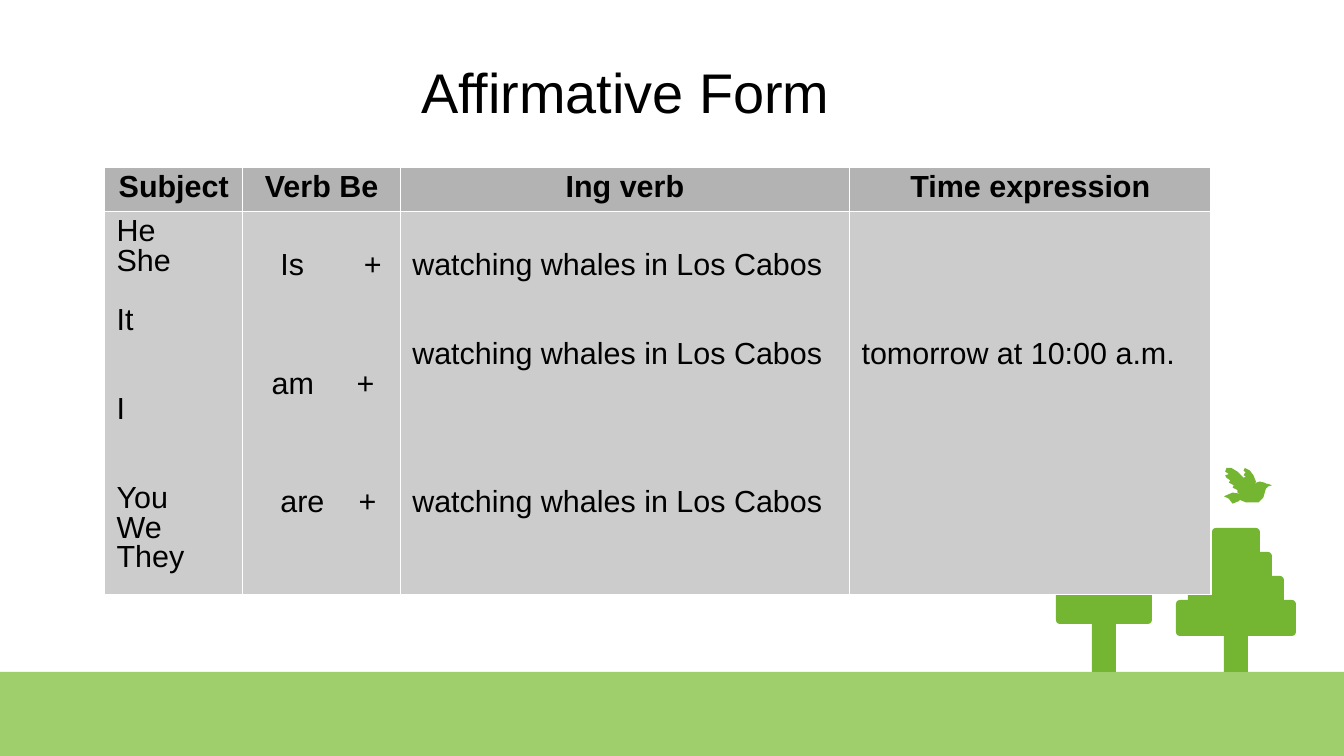
from pptx import Presentation
from pptx.dml.color import RGBColor
from pptx.enum.shapes import MSO_SHAPE
from pptx.enum.text import MSO_ANCHOR, PP_ALIGN
from pptx.oxml import parse_xml
from pptx.oxml.ns import nsdecls
from pptx.util import Cm, Pt

FONT = "Arial"
BLACK = RGBColor(0x00, 0x00, 0x00)
GRASS = RGBColor(0x9E, 0xCF, 0x6C)
LEAF = RGBColor(0x74, 0xB5, 0x31)
HEADER_GRAY = RGBColor(0xB3, 0xB3, 0xB3)
BODY_GRAY = RGBColor(0xCC, 0xCC, 0xCC)

LINE = 17.5  # points taken by one line of table text
COLUMN_WIDTHS = (2.88, 3.28, 9.36, 7.53)
HEADERS = ("Subject", "Verb Be", "Ing verb", "Time expression")
ACTION = "watching whales in Los Cabos"
# Per column: top margin in cm, then (lines skipped, text, tab stops in cm)
BODY = (
    (0.13, [(0, "He", ()), (0, "She", ()), (1, "It", ()), (2, "I", ()),
            (2, "You", ()), (0, "We", ()), (0, "They", ())]),
    (0.84, [(0, "\tIs\t+", (0.53, 2.27)), (3, "\tam\t+", (0.35, 2.12)),
            (3, "\tare\t+", (0.53, 2.16))]),
    (0.84, [(0, ACTION, ()), (2, ACTION, ()), (4, ACTION, ())]),
    (2.69, [(0, "tomorrow at 10:00 a.m.", ())]),
)

# Outlines on a grid 39 units wide
BIRD_WIDTH = 39
BIRD_PARTS = (
    # wing in front
    [(24, 6), (21, 2), (17, 0), (16.5, 2), (18, 4), (17, 4), (16.5, 5.5),
     (18, 7), (16, 7.5), (17, 12), (20, 15), (24, 17), (25, 15), (25.5, 11)],
    # body
    [(29, 11), (26.5, 12.5), (24, 15), (23, 15), (19, 11), (11, 3), (6, 0.5),
     (2, 0.5), (1, 3), (4, 5), (1, 6), (2, 8), (5, 10), (4, 12), (8, 14),
     (7, 16), (11, 18), (11, 20), (14, 21), (7, 20), (0, 23), (4, 25),
     (7, 29), (12, 27), (13, 26), (18, 28), (23, 28.5), (28, 27.5), (32, 24),
     (34, 17), (35, 16), (35, 13), (33, 11.5)],
    # beak
    [(35, 13), (36, 13.3), (39, 14.5), (36.5, 15.3), (35, 16)],
)


def add_text(tf, text, first=False, size=18, bold=False, align=PP_ALIGN.LEFT,
             spacing=0.87, before=0, tabs=()):
    p = tf.paragraphs[0] if first else tf.add_paragraph()
    p.alignment = align
    p.line_spacing = spacing
    p.space_before = Pt(before)
    if tabs:
        stops = "".join(f'<a:tab pos="{Cm(t)}" algn="l"/>' for t in tabs)
        p._p.get_or_add_pPr().append(
            parse_xml(f'<a:tabLst {nsdecls("a")}>{stops}</a:tabLst>'))
    r = p.add_run()
    r.text = text
    r.font.name = FONT
    r.font.size = Pt(size)
    r.font.bold = bold
    r.font.color.rgb = BLACK


def paint(sp, color):
    sp.shadow.inherit = False
    sp.fill.solid()
    sp.fill.fore_color.rgb = color
    sp.line.fill.background()


def add_block(s, kind, x, y, w, h, color):
    sp = s.shapes.add_shape(kind, Cm(x), Cm(y), Cm(w), Cm(h))
    paint(sp, color)
    return sp


def add_tree(s, x, y, w, h, tiers):
    """Stack tiers that widen downwards over a trunk, centred in the box."""
    center = x + w / 2
    add_block(s, MSO_SHAPE.RECTANGLE, center - 0.25, y + 0.5, 0.5, h - 0.5, LEAF)
    for i in reversed(range(tiers)):
        width = 1 + 0.5 * i
        sp = add_block(s, MSO_SHAPE.ROUNDED_RECTANGLE, center - width / 2,
                       y + 0.5 * i, width, 0.75, LEAF)
        sp.adjustments[0] = 0.11


def add_bird(s, x, y, w):
    for start, *rest in BIRD_PARTS:
        builder = s.shapes.build_freeform(*start, scale=Cm(w) / BIRD_WIDTH)
        builder.add_line_segments(rest, close=True)
        paint(builder.convert_to_shape(Cm(x), Cm(y)), LEAF)


def add_scenery(s, w, h):
    ground = h - 1.75
    add_block(s, MSO_SHAPE.RECTANGLE, 0, ground, w, 1.75, GRASS)
    add_tree(s, w - 3.5, ground - 3, 2.5, 3, tiers=4)
    add_tree(s, w - 6, ground - 2.75, 2, 2.75, tiers=3)
    add_bird(s, w - 2.5, ground - 4.25, 1)


def add_title(s, x, y, w, h):
    tf = s.shapes.add_textbox(Cm(x), Cm(y), Cm(w), Cm(h)).text_frame
    tf.word_wrap = True
    tf.vertical_anchor = MSO_ANCHOR.MIDDLE
    tf.margin_left = tf.margin_right = tf.margin_bottom = 0
    tf.margin_top = Cm(0.08)
    add_text(tf, "Affirmative Form", first=True, size=33,
             align=PP_ALIGN.CENTER, spacing=0.93)


def style_cell(cell, color, top=0.13):
    cell.margin_left = cell.margin_right = Cm(0.25)
    cell.margin_top, cell.margin_bottom = Cm(top), Cm(0.13)
    tcPr = cell._tc.get_or_add_tcPr()
    for side in ("lnL", "lnR", "lnT", "lnB"):
        tcPr.append(parse_xml(
            f'<a:{side} {nsdecls("a")} w="{Pt(0.75)}"><a:solidFill>'
            f'<a:srgbClr val="FFFFFF"/></a:solidFill></a:{side}>'))
    cell.fill.solid()
    cell.fill.fore_color.rgb = color


def add_grammar_table(s, x, y, w, h):
    header_height = 0.86
    table = s.shapes.add_table(2, len(HEADERS), Cm(x), Cm(y), Cm(w), Cm(h)).table
    table.horz_banding = False
    table.rows[0].height = Cm(header_height)
    table.rows[1].height = Cm(h - header_height)
    for i, (width, header, (top, lines)) in enumerate(
            zip(COLUMN_WIDTHS, HEADERS, BODY)):
        table.columns[i].width = Cm(width)
        head, body = table.cell(0, i), table.cell(1, i)
        style_cell(head, HEADER_GRAY)
        add_text(head.text_frame, header, first=True, bold=True,
                 align=PP_ALIGN.CENTER)
        style_cell(body, BODY_GRAY, top)
        for n, (skipped, text, tabs) in enumerate(lines):
            add_text(body.text_frame, text, first=n == 0,
                     before=skipped * LINE, tabs=tabs)


def main():
    width, height = 28, 15.75
    prs = Presentation()
    prs.slide_width, prs.slide_height = Cm(width), Cm(height)
    s = prs.slides.add_slide(prs.slide_layouts[6])
    add_scenery(s, width, height)
    add_title(s, 1.68, 0.71, 22.7, 2.44)
    add_grammar_table(s, 2.18, 3.48, sum(COLUMN_WIDTHS), 8.76)
    prs.save("out.pptx")


if __name__ == "__main__":
    main()
